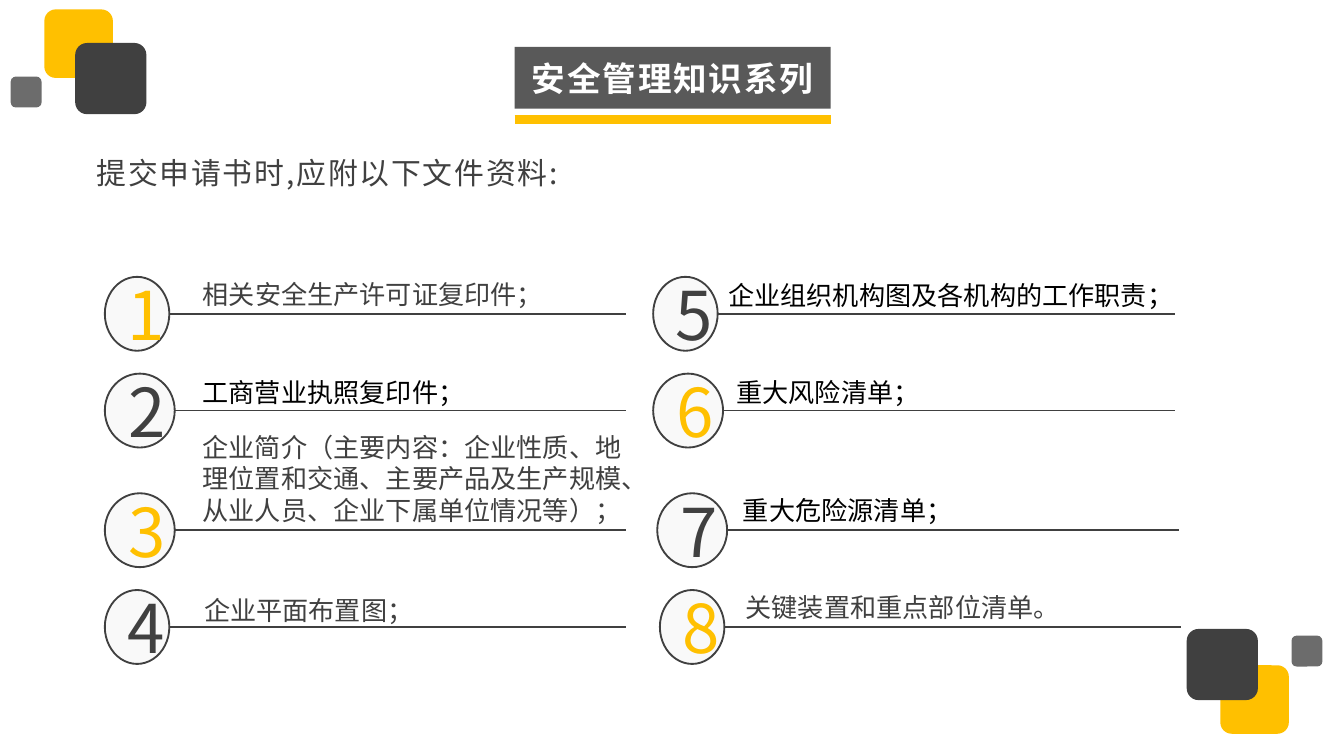
from lxml import etree
from pptx import Presentation
from pptx.dml.color import RGBColor
from pptx.enum.shapes import MSO_CONNECTOR, MSO_SHAPE
from pptx.enum.text import MSO_ANCHOR, MSO_AUTO_SIZE, PP_ALIGN
from pptx.oxml.ns import qn
from pptx.util import Inches, Pt

FONT = "Noto Sans CJK SC"
YELLOW = RGBColor(0xFF, 0xC0, 0x00)
DARK = RGBColor(0x40, 0x40, 0x40)
GREY = RGBColor(0x59, 0x59, 0x59)
PALE = RGBColor(0xF9, 0xF9, 0xF9)
WHITE = RGBColor(0xFF, 0xFF, 0xFF)
BLACK = RGBColor(0, 0, 0)

SLIDE_W = 10
SLIDE_H = SLIDE_W * 9 / 16

# Left, top, side, colour and opacity within the corner box
CORNER_W, CORNER_H = 1.01, 0.78
SQUARES = [
    (0.25, 0, 0.51, YELLOW, None),
    (0.48, 0.25, 0.53, DARK, None),
    (0, 0.5, 0.23, DARK, 77),
]

ITEM_W, ITEM_H = 3.88, 0.55
ROW_TOPS = [2.06, 2.78, 3.67, 4.39]
CIRCLE_WIDTHS = [0.48, 0.52, 0.52, 0.48]
# Item left, number colour, then text, its colour and its left, top, width, height
# relative to the item
ITEMS = [
    (0.78, YELLOW, "相关安全生产许可证复印件；", DARK, (0.63, -0.04, 2.75, 0.34)),
    (0.78, DARK, "工商营业执照复印件；", BLACK, (0.63, -0.03, 2.17, 0.34)),
    (0.78, YELLOW, "企业简介（主要内容：企业性质、地理位置和交通、主要产品及生产规模、"
     "从业人员、企业下属单位情况等）；", DARK, (0.63, -0.51, 3.4, 0.81)),
    (0.78, DARK, "企业平面布置图；", DARK, (0.64, -0.02, 1.77, 0.34)),
    (4.86, DARK, "企业组织机构图及各机构的工作职责；", BLACK, (0.46, -0.03, 3.54, 0.34)),
    (4.86, YELLOW, "重大风险清单；", BLACK, (0.52, -0.03, 1.58, 0.34)),
    (4.89, DARK, "重大危险源清单；", BLACK, (0.54, -0.04, 1.77, 0.34)),
    (4.91, YELLOW, "关键装置和重点部位清单。", DARK, (0.54, -0.04, 2.56, 0.34)),
]


def write(tf, text, size, color, align=PP_ALIGN.LEFT, bold=False, spacing=0):
    p = tf.paragraphs[0]
    p.alignment = align
    r = p.add_run()
    r.text = text
    for name, value in {"name": FONT, "size": Pt(size), "bold": bold}.items():
        setattr(r.font, name, value)
    r.font.color.rgb = color
    r_pr = r._r.get_or_add_rPr()
    if spacing:
        r_pr.set("spc", str(spacing * 100))
    etree.SubElement(r_pr, qn("a:ea")).set("typeface", FONT)


def add_shape(s, kind, x, y, w, h, fill, line=None):
    sp = s.shapes.add_shape(kind, Inches(x), Inches(y), Inches(w), Inches(h))
    sp.shadow.inherit = False
    sp.fill.solid()
    sp.fill.fore_color.rgb = fill
    if line is None:
        sp.line.fill.background()
    else:
        sp.line.color.rgb = line
        sp.line.width = Pt(1)
    return sp


def add_rule(s, x1, x2, y, color, width):
    """Draw a horizontal line."""
    c = s.shapes.add_connector(MSO_CONNECTOR.STRAIGHT,
                               Inches(x1), Inches(y), Inches(x2), Inches(y))
    c.line.color.rgb = color
    c.line.width = Pt(width)
    etree.SubElement(c._element.spPr, qn("a:effectLst"))


def add_text(s, x, y, w, h, text, size, color, wrap=False, spacing=0):
    tf = s.shapes.add_textbox(Inches(x), Inches(y), Inches(w), Inches(h)).text_frame
    tf.word_wrap = wrap
    tf.auto_size = MSO_AUTO_SIZE.SHAPE_TO_FIT_TEXT
    write(tf, text, size, color, spacing=spacing)


def add_corner(s, x, y, turned=False):
    """Place the three squares, turned by half a circle if asked."""
    for dx, dy, side, color, opacity in SQUARES:
        if turned:
            dx, dy = CORNER_W - dx - side, CORNER_H - dy - side
        sp = add_shape(s, MSO_SHAPE.ROUNDED_RECTANGLE, x + dx, y + dy, side, side, color)
        if opacity:
            clr = sp.fill._xPr.find(qn("a:solidFill"))[0]
            etree.SubElement(clr, qn("a:alpha")).set("val", str(opacity * 1000))


def add_title(s, x, y, w, h):
    sp = add_shape(s, MSO_SHAPE.RECTANGLE, x, y, w, h, GREY)
    tf = sp.text_frame
    tf.vertical_anchor = MSO_ANCHOR.MIDDLE
    write(tf, "安全管理知识系列", 18, WHITE, PP_ALIGN.CENTER, bold=True, spacing=1)
    add_rule(s, x, x + w, y + h + 0.08, YELLOW, 5)


def add_item(s, x, y, number, circle_w, number_color, text, text_color, text_box):
    """Place a numbered circle, its line and the text above the line."""
    add_rule(s, x + circle_w, x + ITEM_W, y + ITEM_H / 2, DARK, 1)
    sp = add_shape(s, MSO_SHAPE.OVAL, x, y, circle_w, ITEM_H, PALE, DARK)
    sp.text_frame.vertical_anchor = MSO_ANCHOR.MIDDLE
    write(sp.text_frame, str(number), 36, number_color, PP_ALIGN.CENTER)
    dx, dy, w, h = text_box
    add_text(s, x + dx, y + dy, w, h, text, 14, text_color, wrap=h > ITEM_H)


def main():
    prs = Presentation()
    prs.slide_width, prs.slide_height = Inches(SLIDE_W), Inches(SLIDE_H)
    s = prs.slides.add_slide(prs.slide_layouts[6])
    add_corner(s, 0.08, 0.07)
    add_corner(s, 8.83, 4.68, turned=True)
    add_title(s, 3.83, 0.35, 2.35, 0.46)
    add_text(s, 0.62, 1.1, 3.68, 0.37, "提交申请书时,应附以下文件资料:", 16, DARK, spacing=1)
    for i, (x, *details) in enumerate(ITEMS):
        row = i % len(ROW_TOPS)
        add_item(s, x, ROW_TOPS[row], i + 1, CIRCLE_WIDTHS[row], *details)
    prs.save("out.pptx")


if __name__ == "__main__":
    main()
